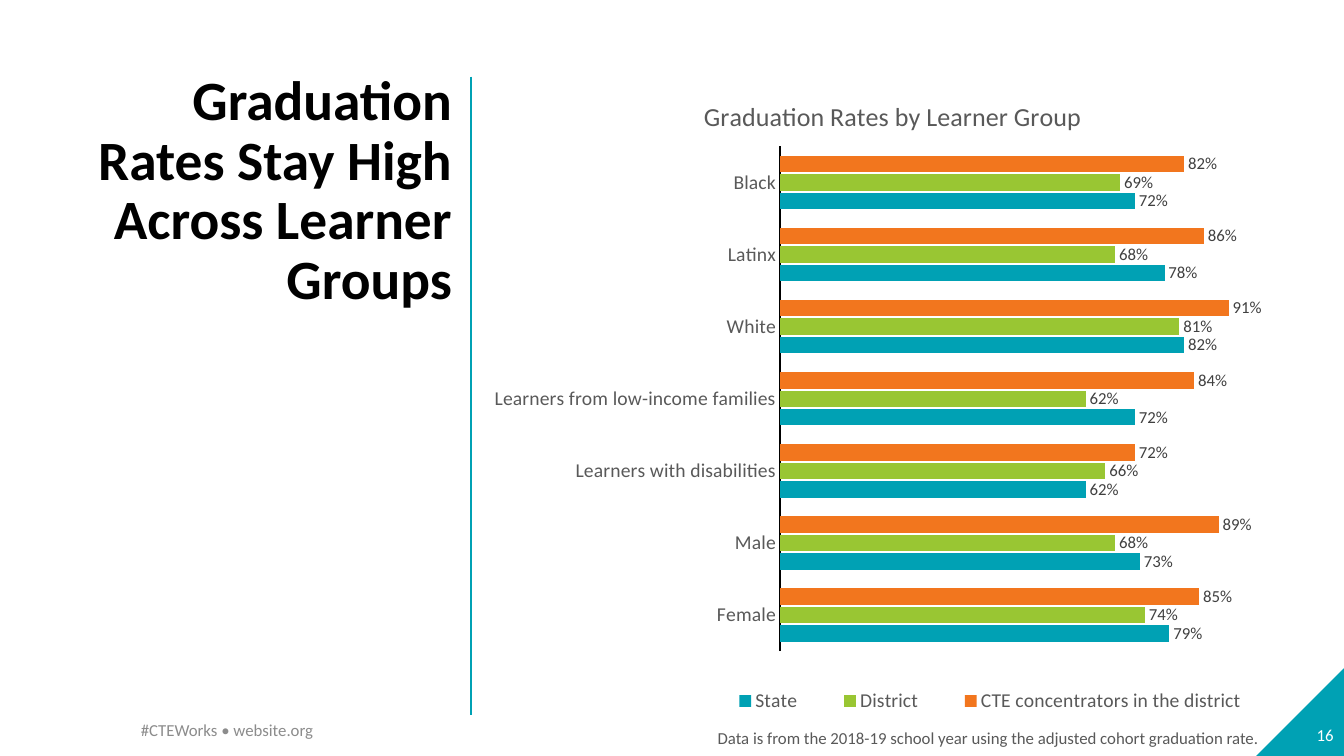
from lxml import etree
from pptx import Presentation
from pptx import util as u
from pptx.chart.data import CategoryChartData
from pptx.dml.color import RGBColor
from pptx.enum import chart as ch
from pptx.enum import shapes, text
from pptx.oxml.ns import qn

TEAL, GREEN, ORANGE = "00A1B4", "99C633", "F2761E"
GREY, BLACK, WHITE = "595959", "000000", "FFFFFF"

GROUPS = ["Black", "Latinx", "White", "Learners from low-income families",
          "Learners with disabilities", "Male", "Female"]
RATES = [
    ("CTE concentrators in the district", ORANGE,
     [0.82, 0.86, 0.91, 0.84, 0.72, 0.89, 0.85]),
    ("District", GREEN, [0.69, 0.68, 0.81, 0.62, 0.66, 0.68, 0.74]),
    ("State", TEAL, [0.72, 0.78, 0.82, 0.72, 0.62, 0.73, 0.79]),
]


def color(value):
    return RGBColor.from_string(value)


def place(part, index, **fractions):
    """Give a chart part a fixed position, as fractions of the chart."""
    for old in part.findall(qn("c:layout")):
        part.remove(old)
    layout = etree.Element(qn("c:layout"))
    part.insert(index, layout)
    manual = etree.SubElement(layout, qn("c:manualLayout"))
    if part.tag == qn("c:plotArea"):
        etree.SubElement(manual, qn("c:layoutTarget")).set("val", "inner")
    for mode in ("xMode", "yMode"):
        etree.SubElement(manual, qn("c:" + mode)).set("val", "edge")
    for key, value in fractions.items():
        etree.SubElement(manual, qn("c:" + key)).set("val", str(value))


class SlideBuilder:
    font_name = "Calibri"

    def __init__(self, slide):
        self.slide = slide

    def style(self, font, size, hex_color, bold=False):
        font.name = self.font_name
        font.size = u.Pt(size)
        font.bold = bold
        font.color.rgb = color(hex_color)

    def textbox(self, box, words, size, hex_color, bold=False, spacing=None,
                align=text.PP_ALIGN.RIGHT, anchor=text.MSO_ANCHOR.TOP):
        frame = self.slide.shapes.add_textbox(*map(u.Cm, box)).text_frame
        frame.word_wrap = True
        frame.vertical_anchor = anchor
        paragraph = frame.paragraphs[0]
        paragraph.alignment = align
        paragraph.line_spacing = spacing
        run = paragraph.add_run()
        run.text = words
        self.style(run.font, size, hex_color, bold)

    def corner(self, box, fill):
        triangle = self.slide.shapes.add_shape(
            shapes.MSO_SHAPE.RIGHT_TRIANGLE, *map(u.Cm, box))
        triangle.shadow.inherit = False
        triangle.fill.solid()
        triangle.fill.fore_color.rgb = color(fill)
        triangle.line.fill.background()
        triangle._element.spPr.xfrm.set("flipH", "1")

    def line(self, ends, hex_color, width):
        divider = self.slide.shapes.add_connector(
            shapes.MSO_CONNECTOR.STRAIGHT, *map(u.Cm, ends))
        divider.line.color.rgb = color(hex_color)
        divider.line.width = u.Pt(width)
        etree.SubElement(divider._element.spPr, qn("a:effectLst"))

    def bar_chart(self, box, title, groups, rates):
        data = CategoryChartData(number_format="0%")
        data.categories = groups
        for name, _, values in rates:
            data.add_series(name, values)
        chart = self.slide.shapes.add_chart(
            ch.XL_CHART_TYPE.BAR_CLUSTERED, *map(u.Cm, box), data).chart
        self.style(chart.font, 10, BLACK)

        # Chart title
        chart.has_title = True
        heading = chart.chart_title.text_frame.paragraphs[0].add_run()
        heading.text = title
        self.style(heading.font, 18.6, GREY)
        place(chart.chart_title._element, 1, x=0.27, y=0.04)

        # Axes
        group_axis, rate_axis = chart.category_axis, chart.value_axis
        group_axis.reverse_order = True
        group_axis.major_tick_mark = ch.XL_TICK_MARK.NONE
        group_axis.format.line.color.rgb = color(BLACK)
        group_axis.format.line.width = u.Pt(1)
        self.style(group_axis.tick_labels.font, 14, GREY)
        rate_axis.minimum_scale, rate_axis.maximum_scale = 0, 1
        rate_axis.has_major_gridlines = False
        rate_axis.visible = False

        # Bars and their labels
        plot = chart.plots[0]
        plot.vary_by_categories = False
        plot.gap_width, plot.overlap = 114, -12
        for series, (_, fill, _) in zip(plot.series, rates):
            series.format.fill.solid()
            series.format.fill.fore_color.rgb = color(fill)
            labels = series.data_labels
            labels.show_value = True
            labels.position = ch.XL_LABEL_POSITION.OUTSIDE_END
            labels.number_format = "0%"
            labels.number_format_is_linked = False
            self.style(labels.font, 12, "404040")
        place(chart._chartSpace.chart.plotArea, 0,
              x=0.37, y=0.12, w=0.61, h=0.76)

        # Legend
        chart.has_legend = True
        chart.legend.position = ch.XL_LEGEND_POSITION.BOTTOM
        chart.legend.include_in_layout = False
        self.style(chart.legend.font, 14, GREY)
        place(chart.legend._element, 1, x=0.27, y=0.91, w=0.72, h=0.09)


def main():
    deck = Presentation()
    deck.slide_width, deck.slide_height = u.Cm(33.87), u.Cm(19.05)
    page = SlideBuilder(deck.slides.add_slide(deck.slide_layouts[6]))

    # Corner, title and chart
    page.corner((31.66, 16.84, 2.21, 2.21), TEAL)
    page.textbox((1.35, 1.7, 10.29, 5.21),
                 "Graduation Rates Stay High Across Learner Groups",
                 39.6, BLACK, bold=True, spacing=0.9)
    page.bar_chart((12.12, 1.68, 20.37, 16.74),
                   "Graduation Rates by Learner Group", GROUPS, RATES)

    # Page number, divider, footer and data note
    page.textbox((26.24, 18.01, 7.62, 1.02), "16", 12, WHITE,
                 anchor=text.MSO_ANCHOR.MIDDLE)
    page.line((11.86, 1.93, 11.86, 18.01), TEAL, 1.5)
    page.textbox((3.3, 17.88, 11.43, 1.02), "#CTEWorks • website.org", 12,
                 "8C8C8C", align=text.PP_ALIGN.LEFT,
                 anchor=text.MSO_ANCHOR.MIDDLE)
    page.textbox((11.86, 18.21, 20.12, 0.76),
                 "Data is from the 2018-19 school year using the adjusted "
                 "cohort graduation rate.", 12, GREY)

    deck.save("out.pptx")


if __name__ == "__main__":
    main()
